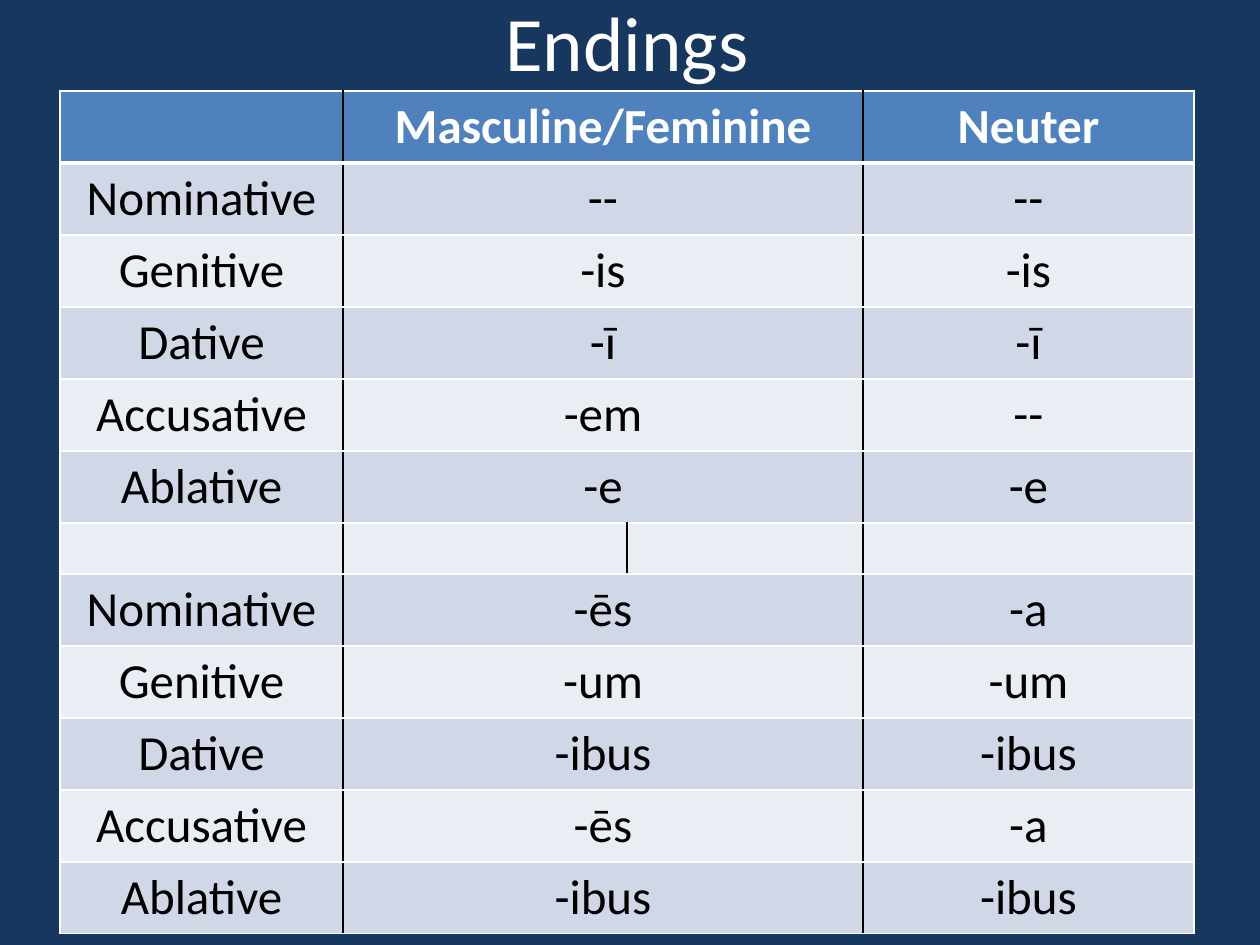
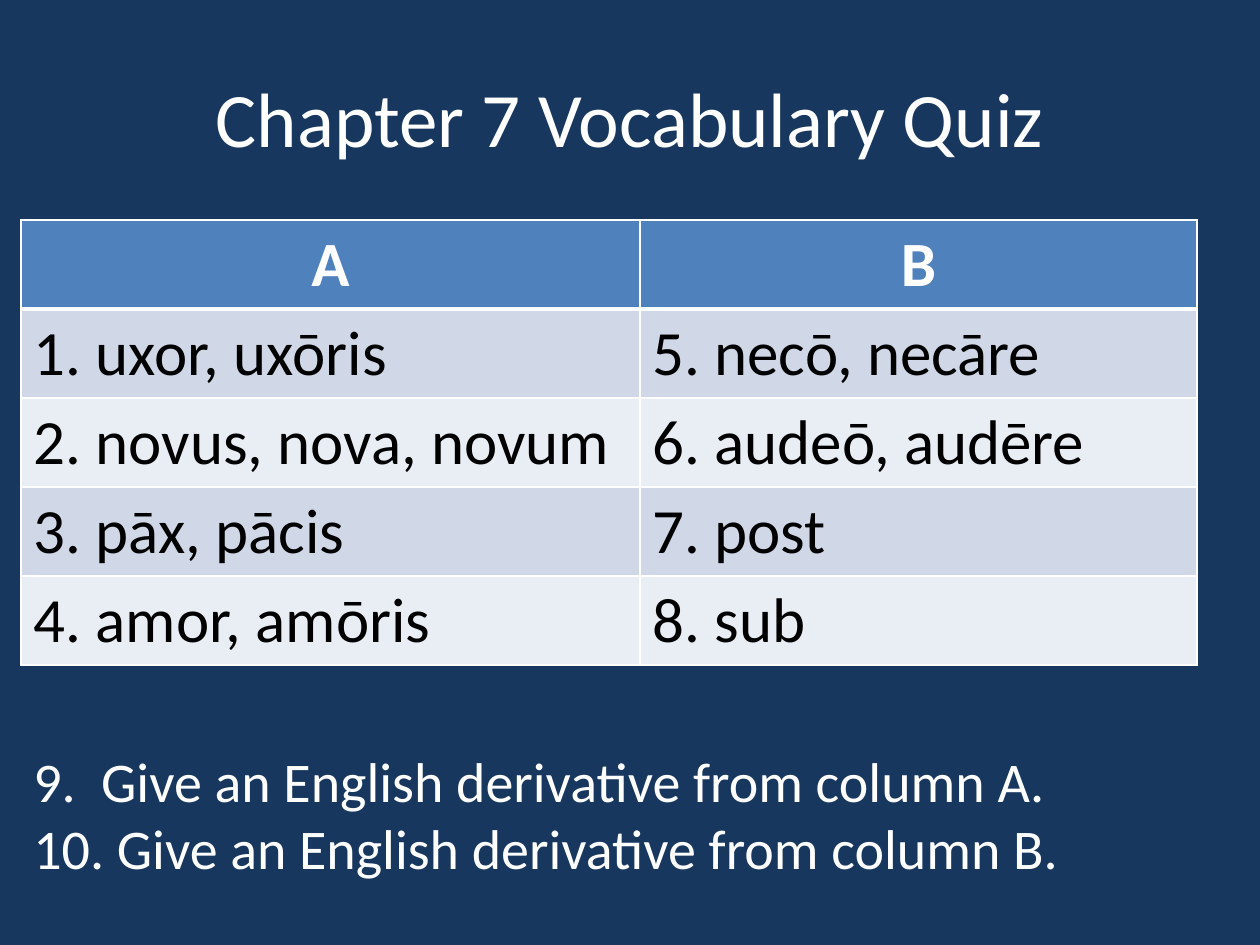
from lxml import etree
from pptx import Presentation
from pptx import util as u
from pptx.dml.color import RGBColor
from pptx.enum import text
from pptx.oxml.ns import qn

NAVY = RGBColor(0x17, 0x37, 0x5E)
BLUE = RGBColor(0x4F, 0x81, 0xBD)
BAND_DARK = RGBColor(0xD0, 0xD8, 0xE8)
BAND_LIGHT = RGBColor(0xE9, 0xED, 0xF4)
WHITE = RGBColor(0xFF, 0xFF, 0xFF)
BLACK = RGBColor(0, 0, 0)
FONT = "Calibri"
CENTER, LEFT = text.PP_ALIGN.CENTER, text.PP_ALIGN.LEFT

ENDINGS = [
    ("", "Masculine/Feminine", "Neuter"),
    ("Nominative", "--", "--"),
    ("Genitive", "-is", "-is"),
    ("Dative", "-ī", "-ī"),
    ("Accusative", "-em", "--"),
    ("Ablative", "-e", "-e"),
    ("", "", ""),
    ("Nominative", "-ēs", "-a"),
    ("Genitive", "-um", "-um"),
    ("Dative", "-ibus", "-ibus"),
    ("Accusative", "-ēs", "-a"),
    ("Ablative", "-ibus", "-ibus"),
]
VOCABULARY = [
    ("A", "B"),
    ("1. uxor, uxōris", "5. necō, necāre"),
    ("2. novus, nova, novum", "6. audeō, audēre"),
    ("3. pāx, pācis", "7. post"),
    ("4. amor, amōris", "8. sub"),
]
QUESTIONS = ["9.  Give an English derivative from column A.",
             "10. Give an English derivative from column B."]


def px(n):
    return u.Emu(round(n * 914400 / 126))


def style_text(tf, size, color, align, bold=False):
    for p in tf.paragraphs:
        p.alignment = align
        for r in p.runs:
            r.font.name, r.font.size, r.font.bold = FONT, u.Pt(size), bold
            r.font.color.rgb = color


def add_text(s, box, lines, size, align, anchor):
    tf = s.shapes.add_textbox(*map(px, box)).text_frame
    tf.word_wrap = True
    tf.vertical_anchor = anchor
    tf.text = "\n".join(lines)
    style_text(tf, size, WHITE, align)


def add_title(s, left, top, title):
    add_text(s, (left, top, 1134, 158), [title], 44, CENTER, text.MSO_ANCHOR.MIDDLE)


def set_border(cell, side, color, width):
    ln = etree.SubElement(cell._tc.get_or_add_tcPr(), qn(f"a:ln{side}"), w=str(u.Pt(width)))
    fill = etree.SubElement(ln, qn("a:solidFill"))
    etree.SubElement(fill, qn("a:srgbClr"), val=str(color))


def add_banded_table(s, left, top, widths, heights, rows, size, body_align, divider):
    """Header row plus banded rows; divider colours the lines between columns."""
    last = len(widths) - 1
    frame = s.shapes.add_table(len(rows), len(widths), px(left), px(top),
                               px(sum(widths)), px(sum(heights)))
    table = frame.table
    table.horz_banding = False
    for column, width in zip(table.columns, widths):
        column.width = px(width)
    for i, (row, height) in enumerate(zip(table.rows, heights)):
        row.height = px(height)
        header = i == 0
        for j, cell in enumerate(row.cells):
            set_border(cell, "L", divider if j > 0 else WHITE, 1)
            set_border(cell, "R", divider if j < last else WHITE, 1)
            set_border(cell, "T", WHITE, 3 if i == 1 else 1)
            set_border(cell, "B", WHITE, 3 if header else 1)
            cell.fill.solid()
            cell.fill.fore_color.rgb = BLUE if header else BAND_DARK if i % 2 else BAND_LIGHT
            if rows[i][j]:
                cell.text_frame.text = rows[i][j]
                style_text(cell.text_frame, size, WHITE if header else BLACK,
                           CENTER if header else body_align, header)
    return table


def add_slide(prs):
    s = prs.slides.add_slide(prs.slide_layouts[6])
    s.background.fill.solid()
    s.background.fill.fore_color.rgb = NAVY
    return s


def endings_slide(prs):
    s = add_slide(prs)
    add_title(s, 60, -38, "Endings")
    rows = [(case, common, "", neuter) for case, common, neuter in ENDINGS]
    heights = [72 if any(row) or i == 0 else 51 for i, row in enumerate(rows)]
    table = add_banded_table(s, 60, 91, (283, 284, 236, 331), heights, rows, 28, CENTER, BLACK)
    for i, row in enumerate(rows):
        if any(row):
            table.cell(i, 1).merge(table.cell(i, 2))


def quiz_slide(prs):
    s = add_slide(prs)
    add_title(s, 63, 38, "Chapter 7 Vocabulary Quiz")
    add_banded_table(s, 21, 220, (619, 557), [89] * len(VOCABULARY), VOCABULARY, 36, LEFT, WHITE)
    add_text(s, (21, 740, 1194, 149), QUESTIONS, 32, LEFT, text.MSO_ANCHOR.TOP)


def main():
    prs = Presentation()
    prs.slide_width, prs.slide_height = px(1260), px(945)
    endings_slide(prs)
    quiz_slide(prs)
    prs.save("out.pptx")


if __name__ == "__main__":
    main()
